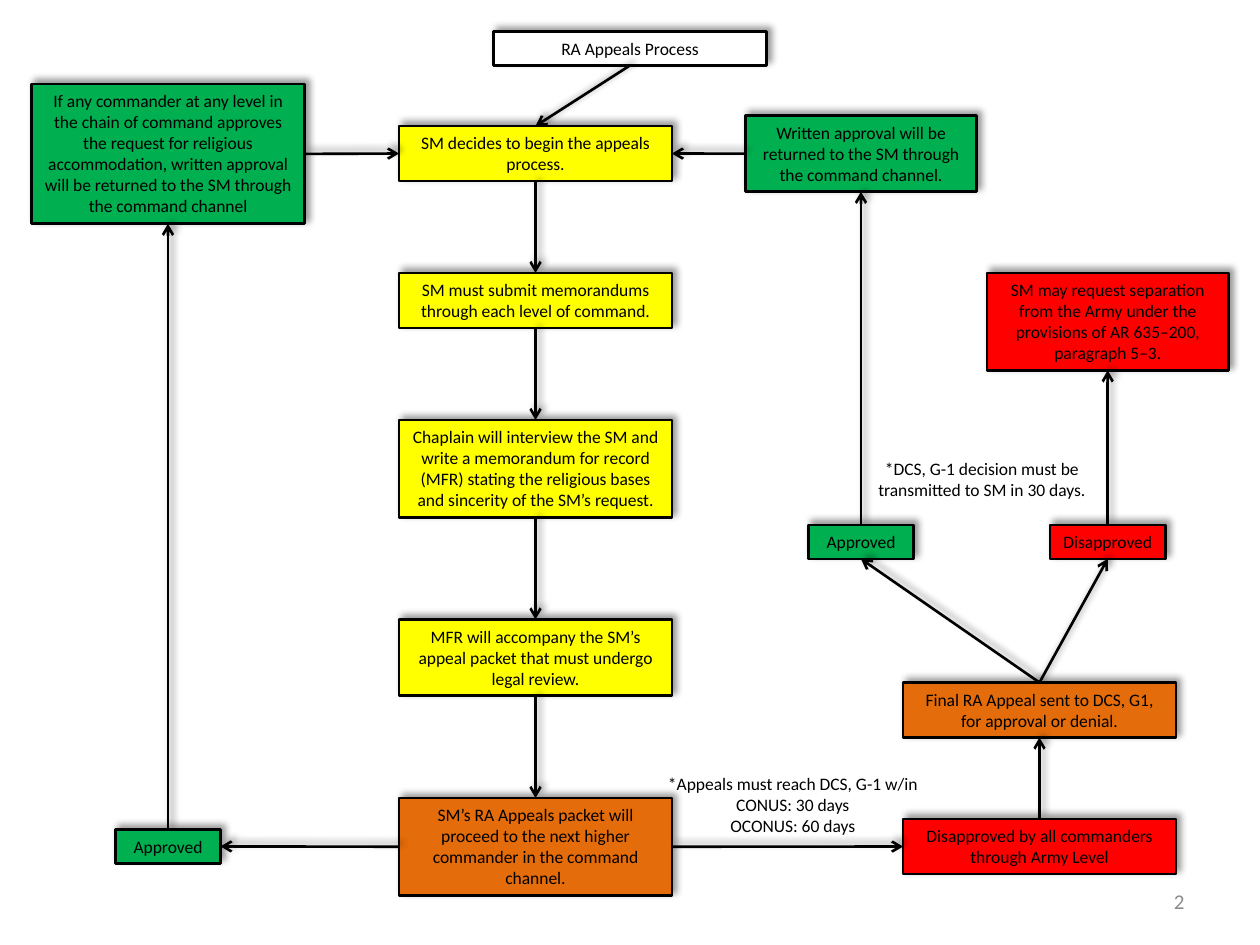
"""Builds the flow chart of the RA appeals process."""
from pptx import Presentation, util as u
from pptx.dml.color import RGBColor
from pptx.enum import shapes, text
from pptx.oxml import ns, parse_xml

BLACK = RGBColor(0, 0, 0)
WHITE = RGBColor(255, 255, 255)
YELLOW = RGBColor(255, 255, 0)
GREEN = RGBColor(0, 176, 80)
ORANGE = RGBColor(228, 108, 10)
RED = RGBColor(255, 0, 0)
GREY = RGBColor(140, 140, 140)

TOP, LEFT, BOTTOM, RIGHT = range(4)
FONT = {"name": "Calibri", "size": u.Pt(10)}
FRAME = {"word_wrap": True, "vertical_anchor": text.MSO_ANCHOR.TOP,
         "auto_size": text.MSO_AUTO_SIZE.SHAPE_TO_FIT_TEXT}
SHADE = (
    f'<a:effectLst {ns.nsdecls("a")}><a:outerShdw blurRad="{u.Pt(4)}" '
    f'dist="{u.Pt(3)}" dir="18900000" algn="bl" rotWithShape="0">'
    '<a:srgbClr val="000000"><a:alpha val="40000"/></a:srgbClr>'
    '</a:outerShdw></a:effectLst>'
)
HEAD = f'<a:tailEnd {ns.nsdecls("a")} type="arrow"/>'

BOXES = {
    "title": (282, 18, 156, 1, WHITE, "RA Appeals Process"),
    "start": (228, 72, 156, 2, YELLOW, "SM decides to begin the appeals process."),
    "memo": (228, 156, 156, 2, YELLOW,
             "SM must submit memorandums through each level of command."),
    "talk": (228, 240, 156, 4, YELLOW,
             "Chaplain will interview the SM and write a memorandum for record "
             "(MFR) stating the religious bases and sincerity of the SM’s request."),
    "legal": (228, 354, 156, 3, YELLOW,
              "MFR will accompany the SM’s appeal packet that must undergo "
              "legal review."),
    "packet": (228, 456, 156, 4, ORANGE,
               "SM’s RA Appeals packet will proceed to the next higher commander "
               "in the command channel."),
    "any": (18, 48, 156, 6, GREEN,
            "If any commander at any level in the chain of command approves the "
            "request for religious accommodation, written approval will be "
            "returned to the SM through the command channel"),
    "yes": (66, 474, 60, 1, GREEN, "Approved"),
    "no": (516, 468, 156, 2, RED,
           "Disapproved by all commanders through Army Level"),
    "final": (516, 390, 156, 2, ORANGE,
              "Final RA Appeal sent to DCS, G1, for approval or denial."),
    "last yes": (462, 300, 60, 1, GREEN, "Approved"),
    "last no": (600, 300, 66, 1, RED, "Disapproved"),
    "written": (426, 66, 132, 3, GREEN,
                "Written approval will be returned to the SM through the "
                "command channel."),
    "leave": (564, 156, 138, 4, RED,
              "SM may request separation from the Army under the provisions of "
              "AR 635–200, paragraph 5–3."),
}

LINKS = [
    ("title", BOTTOM, "start", TOP),
    ("start", BOTTOM, "memo", TOP),
    ("memo", BOTTOM, "talk", TOP),
    ("talk", BOTTOM, "legal", TOP),
    ("legal", BOTTOM, "packet", TOP),
    ("packet", LEFT, "yes", RIGHT),
    ("yes", TOP, "any", BOTTOM),
    ("any", RIGHT, "start", LEFT),
    ("packet", RIGHT, "no", LEFT),
    ("no", TOP, "final", BOTTOM),
    ("final", TOP, "last yes", BOTTOM),
    ("final", TOP, "last no", BOTTOM),
    ("last yes", TOP, "written", BOTTOM),
    ("written", LEFT, "start", RIGHT),
    ("last no", TOP, "leave", BOTTOM),
]


def apply(item, style):
    for key, value in style.items():
        setattr(item, key, value)


def write(shape, words, align=text.PP_ALIGN.CENTER, tint=BLACK, frame=None, font=None):
    body = shape.text_frame
    body.text = words
    apply(body, FRAME | (frame or {}))
    for para in body.paragraphs:
        para.alignment = align
        apply(para.font, FONT | (font or {}))
        para.font.color.rgb = tint


def outline(shape):
    apply(shape.line, {"width": u.Pt(1.5)})
    shape.line.color.rgb = BLACK
    shape.element.spPr.append(parse_xml(SHADE))


def add_box(slide, left, top, width, lines, fill, words):
    area = map(u.Pt, (left, top, width, 7.3 + 12.1 * lines))
    box = slide.shapes.add_shape(shapes.MSO_SHAPE.RECTANGLE, *area)
    box.fill.solid()
    box.fill.fore_color.rgb = fill
    outline(box)
    write(box, words)
    return box


def add_arrow(slide, tail, exit, goal, entry):
    arrow = slide.shapes.add_connector(shapes.MSO_CONNECTOR.STRAIGHT, 0, 0, 0, 0)
    arrow.begin_connect(tail, exit)
    arrow.end_connect(goal, entry)
    outline(arrow)
    arrow.element.spPr.find(ns.qn("a:ln")).append(parse_xml(HEAD))


def add_note(slide, area, words, **style):
    write(slide.shapes.add_textbox(*map(u.Pt, area)), words, **style)


def main():
    deck = Presentation()
    apply(deck, {"slide_width": u.Pt(720), "slide_height": u.Pt(540)})
    slide = deck.slides.add_slide(deck.slide_layouts[6])
    boxes = {name: add_box(slide, *data) for name, data in BOXES.items()}
    for tail, exit, goal, entry in LINKS:
        add_arrow(slide, boxes[tail], exit, boxes[goal], entry)
    add_note(slide, (372, 438, 162, 65.5),
             "*Appeals must reach DCS, G-1 w/in\nCONUS: 30 days\nOCONUS: 60 days")
    add_note(slide, (486, 258, 150, 53.3),
             "*DCS, G-1 decision must be transmitted to SM in 30 days.")
    add_note(slide, (516, 500.5, 168, 28.75), "2",
             align=text.PP_ALIGN.RIGHT, tint=GREY, font={"size": u.Pt(12)},
             frame={"vertical_anchor": text.MSO_ANCHOR.MIDDLE,
                    "auto_size": text.MSO_AUTO_SIZE.NONE})
    deck.save("out.pptx")


if __name__ == "__main__":
    main()
